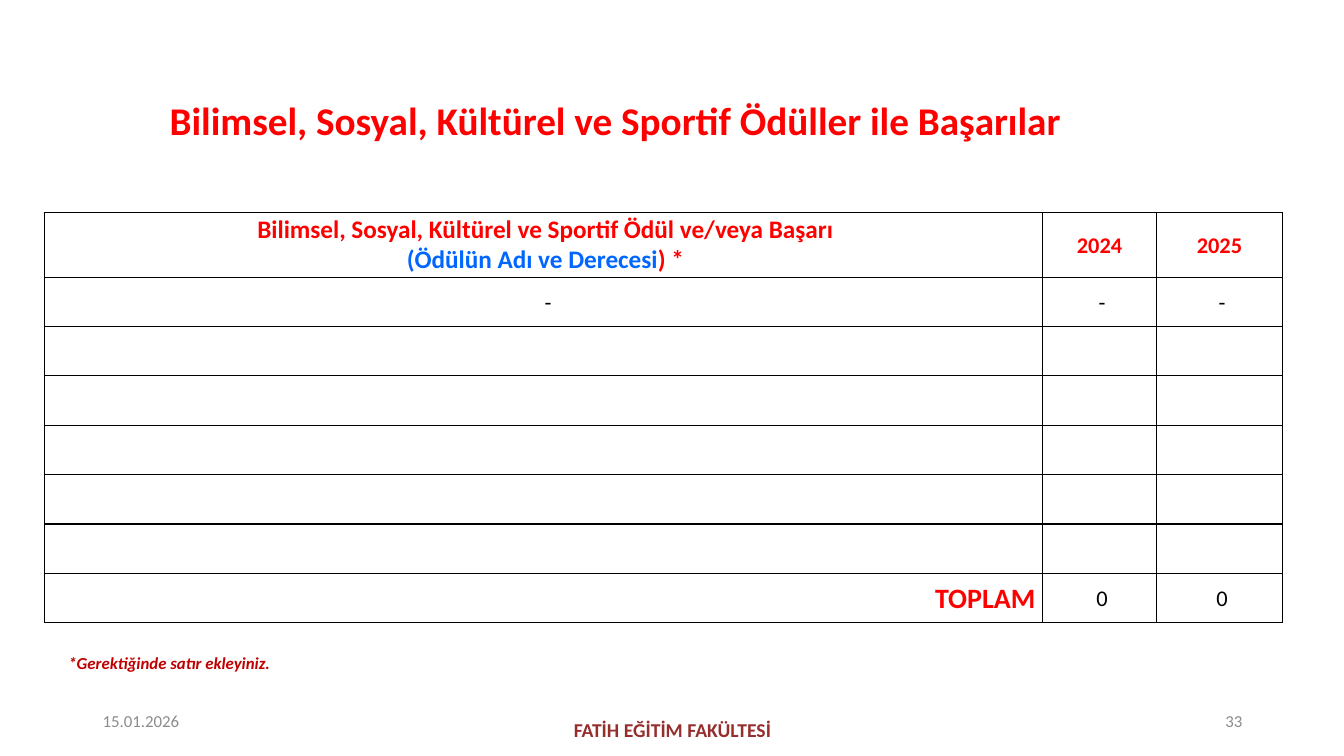
from lxml import etree
from pptx import Presentation
from pptx.dml.color import RGBColor
from pptx.enum.text import MSO_ANCHOR, PP_ALIGN
from pptx.oxml.ns import qn
from pptx.util import Emu, Pt

LEFT, CENTER, RIGHT = PP_ALIGN.LEFT, PP_ALIGN.CENTER, PP_ALIGN.RIGHT
TOP, MIDDLE = MSO_ANCHOR.TOP, MSO_ANCHOR.MIDDLE
FONT = "Calibri"
RED, BLUE, BLACK, WHITE, GRAY = "FF0000", "0066FF", "000000", "FFFFFF", "8C8C8C"
COLUMN_WIDTHS = [990, 113, 125]
HEADER_HEIGHT, ROW_HEIGHT, ROW_COUNT = 64, 49, 8


def px(length):
    return Emu(length * 9144)


def color(value):
    return RGBColor.from_string(value)


def format_font(font, size, value, bold=False, italic=False):
    font.name = FONT
    font.size = Pt(size)
    font.bold = bold
    font.italic = italic
    font.color.rgb = color(value)


def add_title(slide, text):
    title = slide.shapes.title
    title.left, title.top, title.width, title.height = px(35), px(85), px(1150), px(74)
    frame = title.text_frame
    frame.text = text
    frame.vertical_anchor = MIDDLE
    paragraph = frame.paragraphs[0]
    paragraph.alignment = CENTER
    paragraph.line_spacing = 0.9
    format_font(paragraph.runs[0].font, 28, RED, bold=True)


def add_label(slide, text, box, size, value, align=LEFT, anchor=MIDDLE, bold=False, italic=False):
    frame = slide.shapes.add_textbox(*map(px, box)).text_frame
    frame.word_wrap = True
    frame.vertical_anchor = anchor
    frame.text = text
    paragraph = frame.paragraphs[0]
    paragraph.alignment = align
    format_font(paragraph.runs[0].font, size, value, bold, italic)


def add_borders(cell):
    properties = cell._tc.get_or_add_tcPr()
    for index, side in enumerate(("a:lnL", "a:lnR", "a:lnT", "a:lnB")):
        line = etree.Element(qn(side), w=str(Pt(1)))
        fill = etree.SubElement(line, qn("a:solidFill"))
        etree.SubElement(fill, qn("a:srgbClr"), val=BLACK)
        properties.insert(index, line)


def write_cell(cell, text, size, value, bold=False, align=CENTER, spacing=1.07, indent=0):
    cell.text_frame.text = text
    for paragraph in cell.text_frame.paragraphs:
        paragraph._p.get_or_add_pPr().set("marL", str(px(indent)))
        paragraph.alignment = align
        paragraph.line_spacing = spacing
        for run in paragraph.runs:
            format_font(run.font, size, value, bold)


def write_award_header(cell):
    write_cell(
        cell,
        "Bilimsel, Sosyal, Kültürel ve Sportif Ödül ve/veya Başarı\n(Ödülün Adı ve Derecesi",
        18, RED, bold=True, spacing=1.0, indent=4,
    )
    paragraph = cell.text_frame.paragraphs[1]
    paragraph.runs[0].font.color.rgb = color(BLUE)
    ending = paragraph.add_run()
    ending.text = ") *"
    format_font(ending.font, 18, RED, bold=True)


def add_awards_table(slide):
    height = HEADER_HEIGHT + (ROW_COUNT - 1) * ROW_HEIGHT
    table = slide.shapes.add_table(
        ROW_COUNT, len(COLUMN_WIDTHS), px(44), px(211), px(sum(COLUMN_WIDTHS)), px(height)
    ).table
    table.first_row = False
    table.horz_banding = False
    for column, width in zip(table.columns, COLUMN_WIDTHS):
        column.width = px(width)
    for index, row in enumerate(table.rows):
        row.height = px(ROW_HEIGHT if index else HEADER_HEIGHT)
    for cell in table.iter_cells():
        cell.fill.solid()
        cell.fill.fore_color.rgb = color(WHITE)
        cell.vertical_anchor = MIDDLE
        cell.margin_left = cell.margin_right = px(7)
        cell.margin_top = cell.margin_bottom = 0
        add_borders(cell)

    total_row = ROW_COUNT - 1
    write_award_header(table.cell(0, 0))
    write_cell(table.cell(1, 0), " -", 16, BLACK, indent=4)
    write_cell(table.cell(total_row, 0), "TOPLAM", 20, RED, bold=True, align=RIGHT, indent=4)
    for column, year in enumerate(("2024", "2025"), start=1):
        write_cell(table.cell(0, column), year, 16, RED, bold=True)
        write_cell(table.cell(1, column), " -", 16, BLACK)
        write_cell(table.cell(total_row, column), " 0", 16, BLACK)


def main():
    presentation = Presentation()
    presentation.slide_width, presentation.slide_height = px(1333), px(750)
    slide = presentation.slides.add_slide(presentation.slide_layouts[5])
    add_title(slide, "Bilimsel, Sosyal, Kültürel ve Sportif Ödüller ile Başarılar")
    add_awards_table(slide)
    add_label(slide, "*Gerektiğinde satır ekleyiniz.", (58, 643, 500, 30), 12, "C00000",
              anchor=TOP, bold=True, italic=True)
    add_label(slide, "15.01.2026", (92, 695, 300, 40), 12, GRAY)
    add_label(slide, "FATİH EĞİTİM FAKÜLTESİ", (442, 704, 450, 40), 14, "962E2E",
              align=CENTER, bold=True)
    add_label(slide, "33", (942, 695, 300, 40), 12, GRAY, align=RIGHT)
    presentation.save("out.pptx")


if __name__ == "__main__":
    main()
